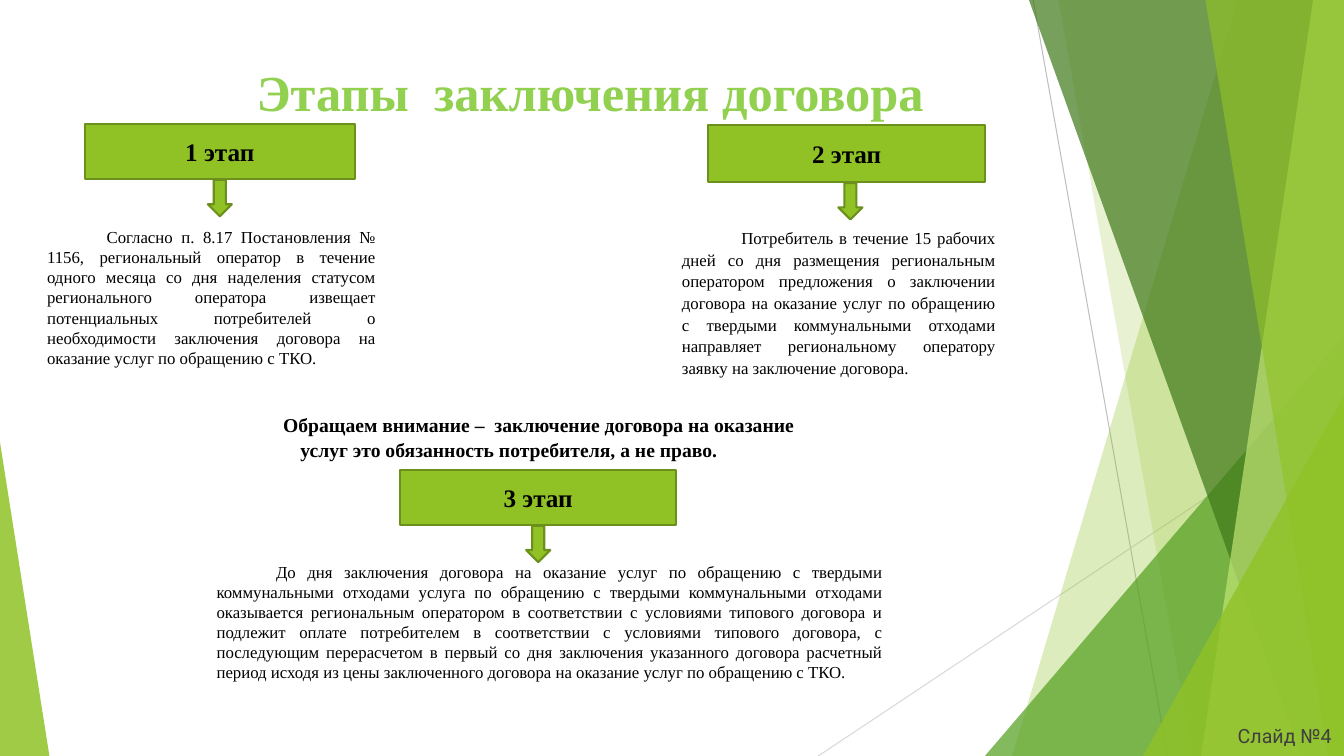
import lxml.etree
import pptx
import pptx.dml.color
import pptx.enum.shapes
import pptx.enum.text
import pptx.oxml.ns
import pptx.util

Pt = pptx.util.Pt
Align = pptx.enum.text.PP_ALIGN
Anchor = pptx.enum.text.MSO_ANCHOR
Shape = pptx.enum.shapes.MSO_SHAPE
qn = pptx.oxml.ns.qn

WIDTH, HEIGHT = 960, 540
SERIF = "Times New Roman"
FIRST_LINE = 42.5
COLOURS = {
    "leaf": "90C226",
    "leaf_edge": "6B901C",
    "forest": "54A021",
    "moss": "3F7819",
    "lime": "C0E474",
    "title": "92D050",
    "text": "000000",
    "footer": "404040",
    "line_dark": "BFBFBF",
    "line_light": "D9D9D9",
}


def colour(name):
    return pptx.dml.color.RGBColor.from_string(COLOURS[name])


def points(*values):
    return [Pt(value) for value in values]


def paint(shape, fill, opacity=100, edge=None):
    shape.shadow.inherit = False
    shape.fill.solid()
    shape.fill.fore_color.rgb = colour(fill)
    if opacity < 100:
        tint = shape.fill._xPr.find(qn("a:solidFill"))[0]
        lxml.etree.SubElement(tint, qn("a:alpha"), val=str(opacity * 1000))
    if edge:
        shape.line.color.rgb = colour(edge)
        shape.line.width = Pt(1.5)
    else:
        shape.line.fill.background()


def write(shape, text, size, align=Align.LEFT, font=SERIF, ink="text", bold=False,
          indent=0, spacing=None, after=0):
    para = shape.text_frame.paragraphs[0]
    para.text = text
    para.alignment = align
    para.space_after = Pt(after)
    if spacing:
        para.line_spacing = spacing
    if indent:
        para._p.get_or_add_pPr().set("indent", str(Pt(indent)))
    para.font.name = font
    para.font.size = Pt(size)
    para.font.bold = bold
    para.font.color.rgb = colour(ink)


def text_box(page, box, text, size, wrap=True, **style):
    shape = page.shapes.add_textbox(*points(*box))
    shape.text_frame.word_wrap = wrap
    write(shape, text, size, **style)


def thin_line(page, start, end, ink):
    line = page.shapes.add_connector(
        pptx.enum.shapes.MSO_CONNECTOR.STRAIGHT, *points(*start, *end))
    line.line.color.rgb = colour(ink)
    line.line.width = Pt(0.75)
    lxml.etree.SubElement(line._element.spPr, qn("a:effectLst"))


def edge_band(page, box, top, bottom, fill, opacity):
    left, upper, width, height = box
    right, lower = left + width, upper + height
    builder = page.shapes.build_freeform(Pt(top), Pt(upper))
    corners = [(right, upper), (right, lower), (bottom, lower)]
    builder.add_line_segments([points(*corner) for corner in corners], close=True)
    paint(builder.convert_to_shape(), fill, opacity)


def corner_triangle(page, box, apex, fill, opacity):
    shape = page.shapes.add_shape(Shape.ISOSCELES_TRIANGLE, *points(*box))
    shape.adjustments[0] = apex
    paint(shape, fill, opacity)


def backdrop(page, box):
    left, top, width, height = box
    right, bottom = left + width, top + height
    thin_line(page, (left + 738, top), (left + 834, bottom), "line_dark")
    thin_line(page, (right, top + 290), (left + 584.5, bottom), "line_light")
    edge_band(page, box, left + 884, left + 723, "leaf", 30)
    edge_band(page, box, left + 756, left + 852, "leaf", 20)
    corner_triangle(page, (right - 256.5, bottom - 300, 256.5, 300), 1, "forest", 72)
    edge_band(page, box, left + 735, left + 929.5, "moss", 70)
    edge_band(page, box, left + 938, left + 858, "lime", 70)
    edge_band(page, box, left + 861, left + 949, "leaf", 65)
    corner_triangle(page, (right - 143.5, bottom - 257, 143.5, 257), 1, "leaf", 80)
    corner_triangle(page, (left, bottom - 224, 35.3, 224), 0, "leaf", 85)


def stage(page, box, name, body_box, body, arrow_shift=0, **body_style):
    left, top, width, height = box
    label = page.shapes.add_shape(Shape.RECTANGLE, *points(*box))
    paint(label, "leaf", edge="leaf_edge")
    label.text_frame.vertical_anchor = Anchor.MIDDLE
    write(label, name, 18, align=Align.CENTER, bold=True)
    body_left, body_top, body_width, body_height = body_box
    text_box(page, (left + body_left, top + body_top, body_width, body_height),
             body, 12, align=Align.JUSTIFY, indent=FIRST_LINE, **body_style)
    arrow_box = (left + width / 2 - 8.6 + arrow_shift, top + height + 0.5, 17.2, 26)
    arrow = page.shapes.add_shape(Shape.DOWN_ARROW, *points(*arrow_box))
    paint(arrow, "leaf", edge="leaf_edge")


def stages_slide(page, box):
    left, top, width, height = box
    backdrop(page, box)
    text_box(page, (left + 877, top + 513.4, 83, 24.5), "Слайд №4", 14,
             wrap=False, font="Roboto", ink="footer")
    heading = dict(align=Align.CENTER, bold=True, indent=FIRST_LINE, spacing=1.07, after=8)
    text_box(page, (left + 128.2, top + 37.4, 544.3, 52), "Этапы  заключения договора",
             36, ink="title", **heading)
    stage(page, (left + 60.5, top + 88.5, 193, 39.5), "1 этап", (-33.9, 69.9, 249, 108.7),
          "Согласно п. 8.17 Постановления № 1156, региональный оператор в течение одного "
          "месяца со дня наделения статусом регионального оператора извещает потенциальных "
          "потребителей о необходимости заключения договора на оказание услуг по обращению "
          "с ТКО.", after=8)
    stage(page, (left + 506, top + 89.3, 197.5, 41), "2 этап", (-26, 69.1, 238.3, 115.2),
          "Потребитель в течение 15 рабочих дней со дня размещения региональным оператором "
          "предложения о заключении договора на оказание услуг по обращению с твердыми "
          "коммунальными отходами направляет региональному оператору заявку на заключение "
          "договора.", arrow_shift=2.7, spacing=1.07, after=8)
    text_box(page, (left + 133.9, top + 290.2, 459.4, 42.5),
             "Обращаем внимание –  заключение договора на оказание услуг это обязанность "
             "потребителя, а не право.", 14, **heading)
    stage(page, (left + 285.8, top + 335.5, 197.3, 39.5), "3 этап", (-138.2, 61.9, 490.3, 94.3),
          "До дня заключения договора на оказание услуг по обращению с твердыми коммунальными "
          "отходами услуга по обращению с твердыми коммунальными отходами оказывается "
          "региональным оператором в соответствии с условиями типового договора и подлежит "
          "оплате потребителем в соответствии с условиями типового договора, с последующим "
          "перерасчетом в первый со дня заключения указанного договора расчетный период исходя "
          "из цены заключенного договора на оказание услуг по обращению с ТКО.")


def main():
    deck = pptx.Presentation()
    deck.slide_width, deck.slide_height = points(WIDTH, HEIGHT)
    page = deck.slides.add_slide(deck.slide_layouts[6])
    stages_slide(page, (0, 0, WIDTH, HEIGHT))
    deck.save("out.pptx")


if __name__ == "__main__":
    main()
